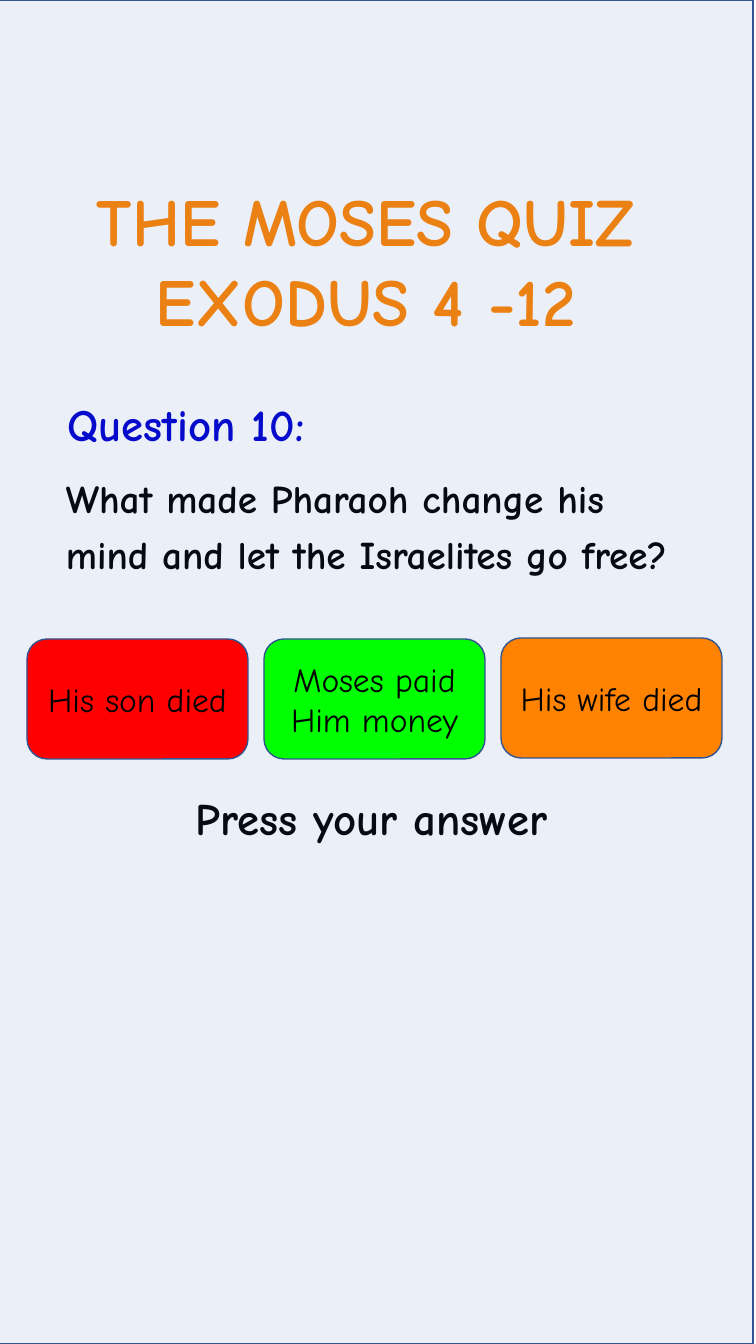
"""Builds the tenth question page of the Moses quiz."""
from lxml.etree import SubElement
from pptx import Presentation
from pptx.dml.color import RGBColor
from pptx.enum.shapes import MSO_SHAPE as Shape
from pptx.enum.text import MSO_ANCHOR as Anchor, PP_ALIGN as Align
from pptx.oxml.ns import qn
from pptx.util import Pt

PX = 914400 / 100.8


def px(*lengths):
    return [round(length * PX) for length in lengths]


def write(box, text, size, colour, bold=True, align=Align.LEFT, anchor=Anchor.TOP, wrap=True):
    frame = box.text_frame
    frame.text = text
    frame.word_wrap = wrap
    frame.vertical_anchor = anchor
    for para in frame.paragraphs:
        para.alignment = align
        for span in para.runs:
            span.font.name = "Comic Neue"
            span.font.size = Pt(size)
            span.font.bold = bold
            span.font.color.rgb = RGBColor.from_string(colour)
    return frame.paragraphs[0]


deck = Presentation()
deck.slide_width, deck.slide_height = px(756, 1344)
page = deck.slides.add_slide(deck.slide_layouts[5])

title = page.shapes.title
title.left, title.top, title.width, title.height = px(30, 174, 695, 173)
write(title, "THE MOSES QUIZ \nEXODUS 4 -12 ", 48, "FF8200", align=Align.CENTER, wrap=False)

heading = page.shapes.add_textbox(*px(33, 392, 306, 65))
write(heading, "Question 10:", 32, "0000CC", align=Align.CENTER, wrap=False)

question = page.shapes.add_textbox(*px(56, 460, 641, 178))
para = write(question, "What made Pharaoh change his mind and let the Israelites go free?",
             28, "000000")
para.line_spacing = Pt(40)
para.space_before = Pt(7.5)

prompt = page.shapes.add_textbox(*px(186, 792, 425, 73))
para = write(prompt, "Press your answer", 32, "000000")
para.line_spacing = 0.9
para.space_before = Pt(7.5)

panels = [(Shape.RECTANGLE, -3, 0, 756, 1344, "4472C4", "")]
answers = [("His son died", "FF0000", 639), ("Moses paid Him money", "00FF00", 639),
           ("His wife died", "FF8200", 638)]
for column, (answer, colour, top) in enumerate(answers):
    panels.append((Shape.ROUNDED_RECTANGLE, 27 + 237 * column, top, 221, 120, colour, answer))

for kind, left, top, width, height, colour, answer in panels:
    panel = page.shapes.add_shape(kind, *px(left, top, width, height))
    panel.shadow.inherit = False
    panel.fill.solid()
    panel.fill.fore_color.rgb = RGBColor.from_string(colour)
    panel.line.color.rgb = RGBColor.from_string("325491")
    panel.line.width = Pt(1)
    if answer:
        write(panel, answer, 24, "000000", bold=False, align=Align.CENTER, anchor=Anchor.MIDDLE)
    else:
        tint = panel.fill._xPr.find(qn("a:solidFill"))[0]
        SubElement(tint, qn("a:alpha"), val="10000")

deck.save("out.pptx")
